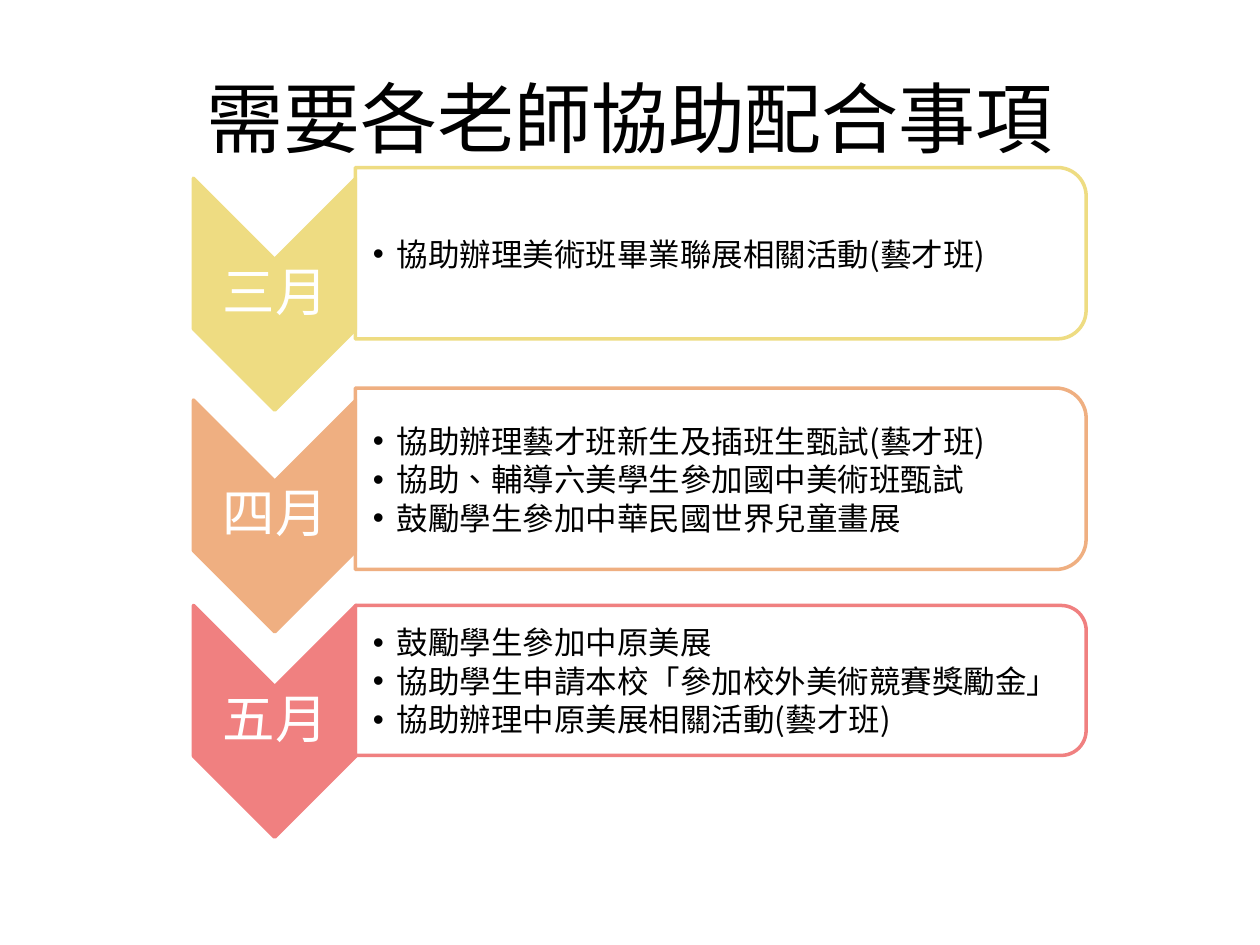
from lxml import etree
from pptx import Presentation
from pptx import util as u
from pptx.dml.color import RGBColor
from pptx.enum import shapes, text
from pptx.oxml.ns import qn

CJK = "Noto Sans CJK SC"
ROWS = [
    ("三月", "EEDC82", 1.69, 2.01, 1.36, ["協助辦理美術班畢業聯展相關活動(藝才班)"]),
    ("四月", "EFAF81", 3.45, 3.8, 1.44, [
        "協助辦理藝才班新生及插班生甄試(藝才班)",
        "協助、輔導六美學生參加國中美術班甄試",
        "鼓勵學生參加中華民國世界兒童畫展"]),
    ("五月", "F08080", 5.08, 5.4, 1.19, [
        "鼓勵學生參加中原美展",
        "協助學生申請本校「參加校外美術競賽獎勵金」",
        "協助辦理中原美展相關活動(藝才班)"]),
]


def paint(code):
    return RGBColor.from_string(code)


def write(par, words, size=18, color="000000", face=CJK, align=None, space=None, bullet=False):
    if bullet:
        props = par._p.get_or_add_pPr()
        props.set("marL", str(u.Inches(0.19)))
        props.set("indent", str(-u.Inches(0.19)))
        etree.SubElement(props, qn("a:buFont")).set("typeface", "Arial")
        etree.SubElement(props, qn("a:buChar")).set("char", "•")
    if align is not None:
        par.alignment = align
    if space is not None:
        par.line_spacing = space
    run = par.add_run()
    run.text = words
    run.font.size = u.Pt(size)
    run.font.name = face
    run.font.color.rgb = paint(color)
    props = run._r.get_or_add_rPr()
    props.set("lang", "zh-TW")
    etree.SubElement(props, qn("a:ea")).set("typeface", CJK)


class Deck:
    def __init__(self, wide, high):
        self.show = Presentation()
        self.show.slide_width = u.Inches(wide)
        self.show.slide_height = u.Inches(high)
        self.slide = self.show.slides.add_slide(self.show.slide_layouts[6])

    def box(self, place, lines, pads=None, **style):
        frame = self.slide.shapes.add_textbox(*map(u.Inches, place)).text_frame
        frame.word_wrap = True
        frame.vertical_anchor = text.MSO_ANCHOR.MIDDLE
        if pads:
            (frame.margin_left, frame.margin_top,
             frame.margin_right, frame.margin_bottom) = map(u.Inches, pads)
        for spot, words in enumerate(lines):
            par = frame.add_paragraph() if spot else frame.paragraphs[0]
            write(par, words, **style)

    def shape(self, kind, place, fill, line, alpha=None):
        item = self.slide.shapes.add_shape(kind, *map(u.Inches, place))
        item.rotation = 90
        item.shadow.inherit = False
        item.fill.solid()
        item.fill.fore_color.rgb = paint(fill)
        item.line.color.rgb = paint(line)
        item.line.width = u.Pt(2)
        if alpha:
            tone = item._element.spPr.find(qn("a:solidFill"))[0]
            etree.SubElement(tone, qn("a:alpha")).set("val", str(alpha * 1000))


def main():
    deck = Deck(10, 7.5)
    mid = text.PP_ALIGN.CENTER
    deck.box((0.5, 0.3, 9, 1.25), ["需要各老師協助配合事項"], size=44, align=mid)
    for month, hue, top, center, high, tasks in ROWS:
        deck.shape(shapes.MSO_SHAPE.CHEVRON, (1.26, top, 1.84, 1.29), hue, hue)
        deck.box((1.54, top + 0.37, 1.29, 0.55), [month], (0.02,) * 4,
                 size=30, color="FFFFFF", face="Calibri", align=mid, space=0.9)
        deck.shape(shapes.MSO_SHAPE.ROUND_2_SAME_RECTANGLE,
                   (5.72 - high / 2, center - 2.9, high, 5.8), "FFFFFF", hue, alpha=90)
        inner = high - 0.13
        deck.box((2.82, center - inner / 2, 5.74, inner), tasks,
                 (0.14, 0.01, 0.01, 0.01), space=u.Pt(22), bullet=True)
    deck.show.save("out.pptx")


if __name__ == "__main__":
    main()
